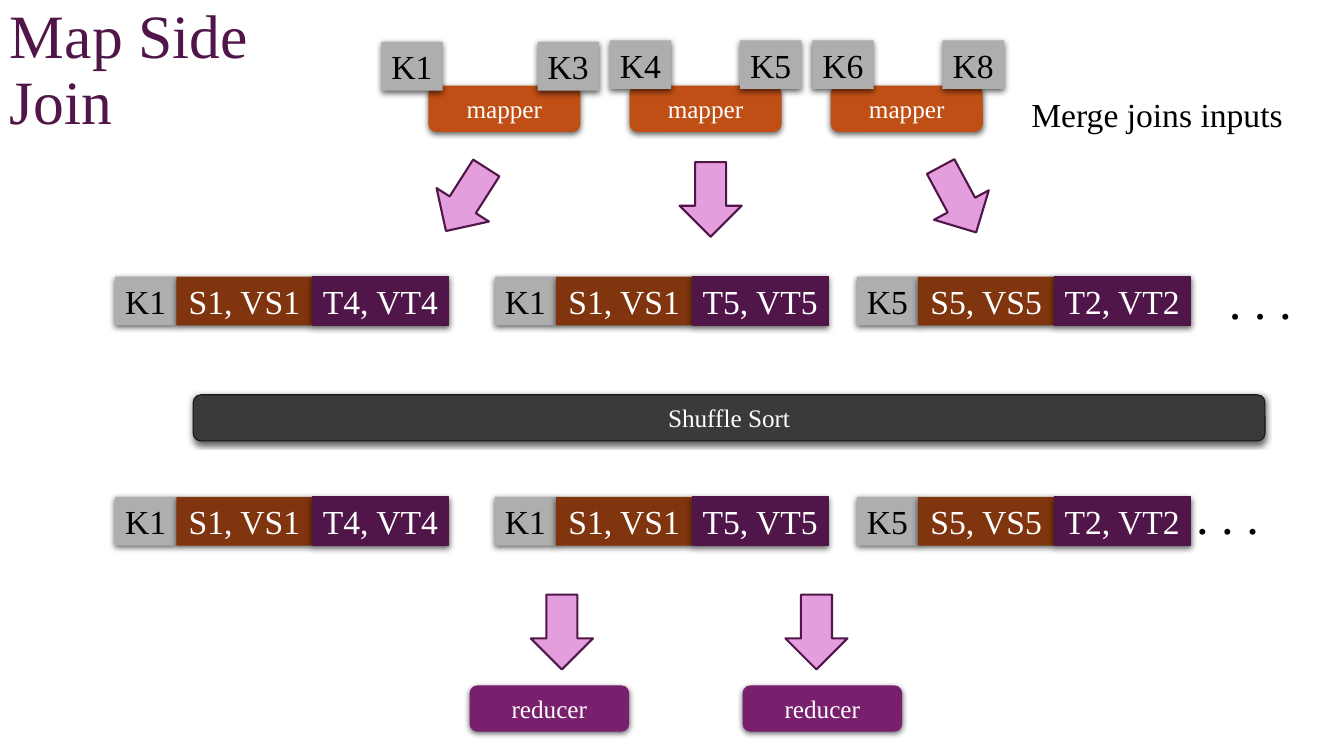
from dataclasses import dataclass

from lxml import etree
from pptx import Presentation
from pptx.dml.color import RGBColor
from pptx.enum.shapes import MSO_SHAPE
from pptx.enum.text import MSO_ANCHOR, PP_ALIGN
from pptx.oxml.ns import qn
from pptx.util import Inches, Pt

RECTANGLE = MSO_SHAPE.RECTANGLE
ROUNDED = MSO_SHAPE.ROUNDED_RECTANGLE
DOWN_ARROW = MSO_SHAPE.DOWN_ARROW
MIDDLE = MSO_ANCHOR.MIDDLE
CENTER = PP_ALIGN.CENTER
COLUMNS, ROWS = 160, 90
BAR_HEIGHT = 5.5
TILE_HEIGHT = 5.8
KEY_WIDTH = 7.3
VALUE_WIDTH = 16.2


@dataclass(frozen=True)
class Theme:
    font: str = "Times New Roman"
    title_size: int = 44
    dots_size: int = 36
    body_size: int = 24
    label_size: int = 18
    black: str = "000000"
    white: str = "FFFFFF"
    plum: str = "501649"
    pink: str = "E59EDD"
    orange: str = "C04F15"
    brown: str = "80350E"
    gray: str = "AEAEAE"
    charcoal: str = "3A3A3A"
    charcoal_edge: str = "171717"
    purple: str = "78206E"


class JoinSlide:
    def __init__(self, deck, theme):
        self.theme = theme
        self.page = deck.slides.add_slide(deck.slide_layouts[6])
        self.column = deck.slide_width / COLUMNS
        self.row = deck.slide_height / ROWS

    def frame(self, left, top, width, height):
        return (round(left * self.column), round(top * self.row),
                round(width * self.column), round(height * self.row))

    def set_text(self, box, text, size, color):
        para = box.text_frame.paragraphs[0]
        para.text = text
        para.font.name = self.theme.font
        para.font.size = Pt(size)
        para.font.color.rgb = RGBColor.from_string(color)
        return para

    def label(self, text, place, size, color, spacing=1.0, wrap=False):
        box = self.page.shapes.add_textbox(*self.frame(*place))
        box.text_frame.word_wrap = wrap
        self.set_text(box, text, size, color).line_spacing = spacing

    def shape(self, kind, place, fill, edge=None, weight=0.75, parent=None):
        shapes = (parent or self.page).shapes
        shape = shapes.add_shape(kind, *self.frame(*place))
        shape.fill.solid()
        shape.fill.fore_color.rgb = RGBColor.from_string(fill)
        if edge:
            shape.line.color.rgb = RGBColor.from_string(edge)
            shape.line.width = Pt(weight)
        else:
            shape.line.fill.background()
        shape.shadow.inherit = False
        return shape

    def add_shadow(self, shape):
        effects = shape._element.spPr.find(qn("a:effectLst"))
        shadow = etree.SubElement(
            effects, qn("a:outerShdw"), blurRad=str(Pt(4.5)), dist=str(Pt(1.5)),
            dir="5400000", algn="ctr", rotWithShape="0")
        color = etree.SubElement(shadow, qn("a:srgbClr"), val=self.theme.black)
        etree.SubElement(color, qn("a:alpha"), val="63000")

    def block(self, kind, text, place, fill, size, color, edge=None, parent=None):
        shape = self.shape(kind, place, fill, edge, parent=parent)
        self.add_shadow(shape)
        shape.text_frame.word_wrap = False
        shape.text_frame.vertical_anchor = MIDDLE
        self.set_text(shape, text, size, color).alignment = CENTER

    def bar(self, text, left, top, width, fill, edge=None):
        self.block(ROUNDED, text, (left, top, width, BAR_HEIGHT), fill,
                   self.theme.label_size, self.theme.white, edge)

    def key(self, text, left, top, parent=None):
        self.block(RECTANGLE, text, (left, top, KEY_WIDTH, TILE_HEIGHT), self.theme.gray,
                   self.theme.body_size, self.theme.black, parent=parent)

    def record(self, key, source, target, left, top):
        theme = self.theme
        group = self.page.shapes.add_group_shape()
        self.key(key, left, top, group)
        values = ((source, theme.brown, None), (target, theme.plum, theme.plum))
        for index, (text, fill, edge) in enumerate(values):
            place = (left + KEY_WIDTH + index * VALUE_WIDTH, top, VALUE_WIDTH, TILE_HEIGHT)
            self.block(RECTANGLE, text, place, fill, theme.body_size, theme.white, edge, group)

    def arrow(self, left, top, rotation=0):
        shape = self.shape(DOWN_ARROW, (left, top, 7.4, 8.9),
                           self.theme.pink, self.theme.plum, 1.5)
        shape.rotation = rotation

    def dots(self, left, top):
        self.label(". . .", (left, top, 12.7, 8.5), self.theme.dots_size, self.theme.black)


def main():
    deck = Presentation()
    deck.slide_width, deck.slide_height = Inches(13.33), Inches(7.5)
    theme = Theme()
    slide = JoinSlide(deck, theme)

    slide.label("Map Side Join", (0, 0, 40.9, 17.8), theme.title_size, theme.plum, 0.9, True)
    for index in range(3):
        slide.bar("mapper", 51 + index * 23.95, 10.2, 18.1, theme.orange)
    keys = (("K1", 45.4, 5), ("K3", 64, 5), ("K4", 72.6, 4.8),
            ("K5", 88.1, 4.8), ("K6", 96.7, 4.8), ("K8", 112.2, 4.8))
    for text, left, top in keys:
        slide.key(text, left, top)
    slide.label("Merge joins inputs", (121.6, 10.6, 36.4, 6), theme.body_size, theme.black)

    for left, rotation in ((51.8, 32.6), (80.9, 0), (110.4, 331.7)):
        slide.arrow(left, 19.3, rotation)

    records = (("K1", "S1, VS1", "T4, VT4", 13.7),
               ("K1", "S1, VS1", "T5, VT5", 58.9),
               ("K5", "S5, VS5", "T2, VT2", 102))
    for top in (32.95, 59.15):
        for key, source, target, left in records:
            slide.record(key, source, target, left, top)
    slide.dots(145.1, 31.4)
    slide.dots(141.2, 57.1)

    slide.bar("Shuffle Sort", 23, 47, 127.6, theme.charcoal, theme.charcoal_edge)

    for arrow_left, reducer_left in ((63.2, 55.9), (93.5, 88.4)):
        slide.arrow(arrow_left, 70.8)
        slide.bar("reducer", reducer_left, 81.6, 19, theme.purple)

    deck.save("out.pptx")


if __name__ == "__main__":
    main()
